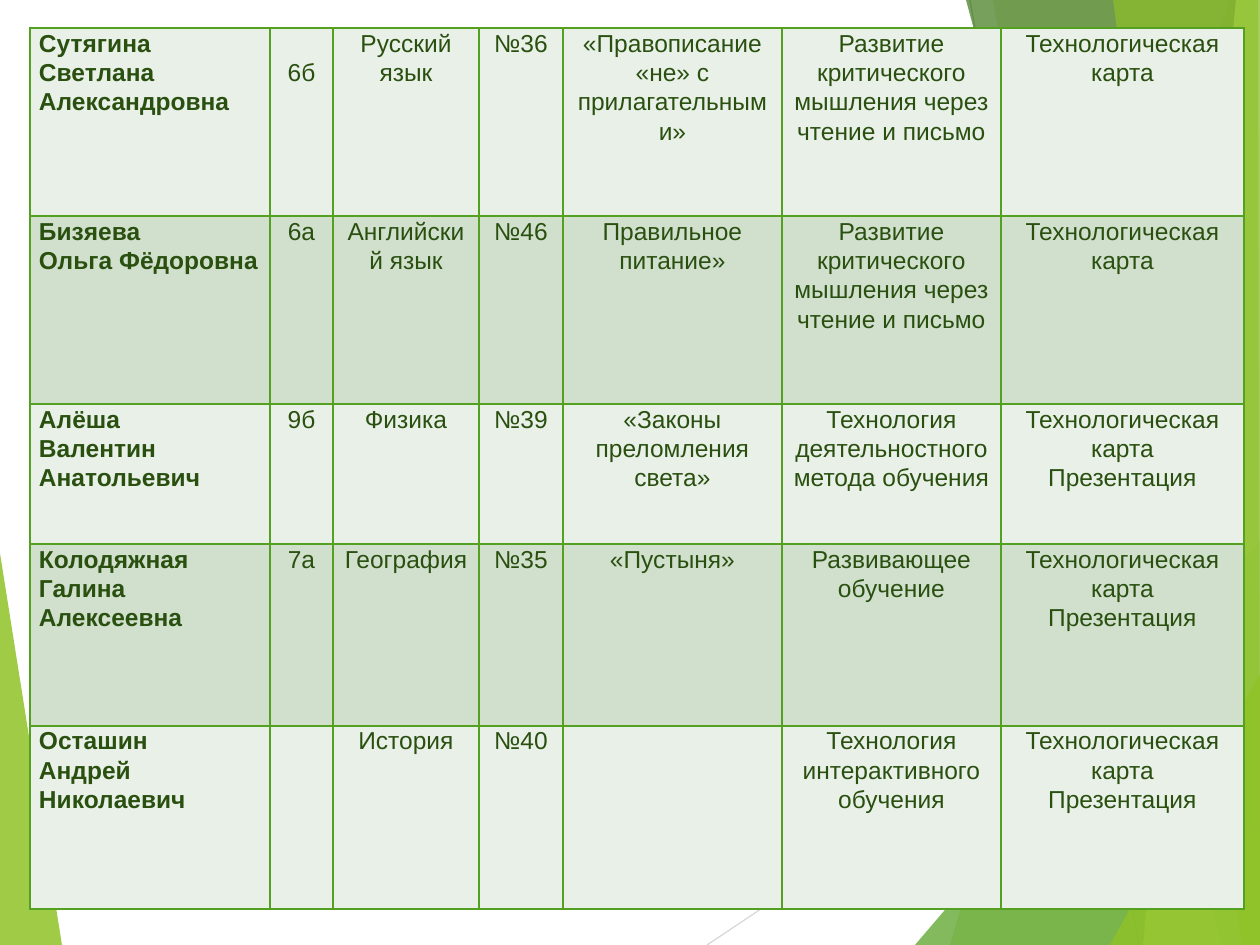
from dataclasses import dataclass

from lxml.etree import SubElement
from pptx import Presentation
from pptx.dml.color import RGBColor
from pptx.enum.shapes import MSO_CONNECTOR
from pptx.enum.text import PP_ALIGN
from pptx.oxml.ns import qn
from pptx.util import Pt

EMU_PER_PX = 914400 / 126
WIDTH, HEIGHT = 1260, 945


@dataclass(frozen=True)
class Theme:
    lime: str = "90C226"
    green: str = "54A021"
    forest: str = "3F7819"
    pale_lime: str = "C0E474"
    light_gray: str = "D9D9D9"
    gray: str = "BFBFBF"
    text: str = "2A5010"
    bands: tuple[str, str] = ("E9F0E8", "D1DFCD")
    font: str = "Arial"
    size: int = 14
    line_spacing: float = 1.07
    ray_width: float = 0.75
    border_width: int = 1


@dataclass(frozen=True)
class Facet:
    points: tuple[tuple[int, int], ...]
    color: str
    opacity: int


@dataclass(frozen=True)
class Ray:
    start: tuple[int, int]
    end: tuple[int, int]
    color: str


@dataclass(frozen=True)
class Lesson:
    teacher: str
    grade: str
    subject: str
    room: str
    topic: str
    method: str
    materials: str
    grade_top: int = 0


THEME = Theme()
CORNER = (WIDTH, HEIGHT)
TOP_RIGHT = (WIDTH, 0)

LEFT_FACET = Facet(((0, 553), (62, HEIGHT), (0, HEIGHT)), THEME.lime, 85)
RAYS = (
    Ray((707, HEIGHT), (WIDTH, 576), THEME.light_gray),
    Ray((970, 0), (1139, HEIGHT), THEME.gray),
)
RIGHT_FACETS = (
    Facet(((1229, 0), (950, HEIGHT), CORNER, TOP_RIGHT), THEME.lime, 30),
    Facet(((993, 0), (1158, HEIGHT), CORNER, TOP_RIGHT), THEME.lime, 20),
    Facet(((915, HEIGHT), (WIDTH, 541), CORNER), THEME.green, 72),
    Facet(((966, 0), (1222, HEIGHT), CORNER, TOP_RIGHT), THEME.forest, 70),
    Facet(((1236, 0), (1143, HEIGHT), CORNER, TOP_RIGHT), THEME.pale_lime, 70),
    Facet(((1113, 0), (1242, HEIGHT), CORNER, (1258, 0)), THEME.lime, 65),
    Facet(((1110, HEIGHT), (WIDTH, 674), CORNER), THEME.lime, 80),
)

TABLE_LEFT, TABLE_TOP, CELL_INSET = 30, 28, 9
COLUMNS = (240, 63, 146, 84, 219, 219, 243)
ROWS = (188, 188, 140, 182, 183)
CRITICAL_THINKING = "Развитие критического мышления через чтение и письмо"
CARD = "Технологическая карта"
CARD_AND_SLIDES = CARD + "\nПрезентация"
LESSONS = (
    Lesson("Сутягина\nСветлана Александровна", "6б", "Русский язык", "№36",
           "«Правописание «не» с прилагательными»", CRITICAL_THINKING, CARD, grade_top=29),
    Lesson("Бизяева\nОльга Фёдоровна", "6а", "Английский язык", "№46",
           "Правильное питание»", CRITICAL_THINKING, CARD),
    Lesson("Алёша\nВалентин Анатольевич", "9б", "Физика", "№39",
           "«Законы преломления света»", "Технология деятельностного метода обучения",
           CARD_AND_SLIDES),
    Lesson("Колодяжная\nГалина Алексеевна", "7а", "География", "№35",
           "«Пустыня»", "Развивающее обучение", CARD_AND_SLIDES),
    Lesson("Осташин\nАндрей Николаевич", "", "История", "№40",
           "", "Технология интерактивного обучения", CARD_AND_SLIDES),
)


def px(n: int) -> int:
    return round(n * EMU_PER_PX)


def rgb(color: str) -> RGBColor:
    return RGBColor.from_string(color)


def draw_facet(s, facet: Facet) -> None:
    builder = s.shapes.build_freeform(*facet.points[0], scale=EMU_PER_PX)
    builder.add_line_segments(facet.points[1:], close=True)
    sp = builder.convert_to_shape()
    sp.shadow.inherit = False
    sp.line.fill.background()
    sp.fill.solid()
    sp.fill.fore_color.rgb = rgb(facet.color)
    color = sp.fill._xPr.find(f"{qn('a:solidFill')}/{qn('a:srgbClr')}")
    SubElement(color, qn("a:alpha"), val=str(facet.opacity * 1000))


def draw_ray(s, ray: Ray) -> None:
    x1, y1 = ray.start
    x2, y2 = ray.end
    line = s.shapes.add_connector(MSO_CONNECTOR.STRAIGHT, px(x1), px(y1), px(x2), px(y2))
    line.line.color.rgb = rgb(ray.color)
    line.line.width = Pt(THEME.ray_width)
    SubElement(line._element.spPr, qn("a:effectLst"))


def style_cell(cell, color: str, top: int) -> None:
    cell.margin_left = cell.margin_right = px(CELL_INSET)
    cell.margin_top, cell.margin_bottom = px(top), 0
    tc_pr = cell._tc.get_or_add_tcPr()
    for side in ("lnL", "lnR", "lnT", "lnB"):
        ln = SubElement(tc_pr, qn(f"a:{side}"), w=str(Pt(THEME.border_width)))
        SubElement(SubElement(ln, qn("a:solidFill")), qn("a:srgbClr"), val=THEME.green)
    cell.fill.solid()
    cell.fill.fore_color.rgb = rgb(color)


def write_cell(cell, text: str, bold: bool) -> None:
    tf = cell.text_frame
    for i, line in enumerate(text.split("\n") if text else ()):
        p = tf.add_paragraph() if i else tf.paragraphs[0]
        p.alignment = PP_ALIGN.LEFT if bold else PP_ALIGN.CENTER
        p.line_spacing = THEME.line_spacing
        r = p.add_run()
        r.text = line
        r.font.name = THEME.font
        r.font.size = Pt(THEME.size)
        r.font.bold = bold
        r.font.color.rgb = rgb(THEME.text)


def draw_lessons(s, lessons: tuple[Lesson, ...]) -> None:
    table = s.shapes.add_table(len(ROWS), len(COLUMNS), px(TABLE_LEFT), px(TABLE_TOP),
                               px(sum(COLUMNS)), px(sum(ROWS))).table
    table.first_row = table.horz_banding = False
    for column, width in zip(table.columns, COLUMNS):
        column.width = px(width)
    for i, (row, height, lesson) in enumerate(zip(table.rows, ROWS, lessons)):
        row.height = px(height)
        texts = (lesson.teacher, lesson.grade, lesson.subject, lesson.room,
                 lesson.topic, lesson.method, lesson.materials)
        for j, (cell, text) in enumerate(zip(row.cells, texts)):
            style_cell(cell, THEME.bands[i % 2], lesson.grade_top if j == 1 else 0)
            write_cell(cell, text, bold=j == 0)


def main() -> None:
    prs = Presentation()
    prs.slide_width, prs.slide_height = px(WIDTH), px(HEIGHT)
    s = prs.slides.add_slide(prs.slide_layouts[6])
    draw_facet(s, LEFT_FACET)
    for ray in RAYS:
        draw_ray(s, ray)
    for facet in RIGHT_FACETS:
        draw_facet(s, facet)
    draw_lessons(s, LESSONS)
    prs.save("out.pptx")


if __name__ == "__main__":
    main()
